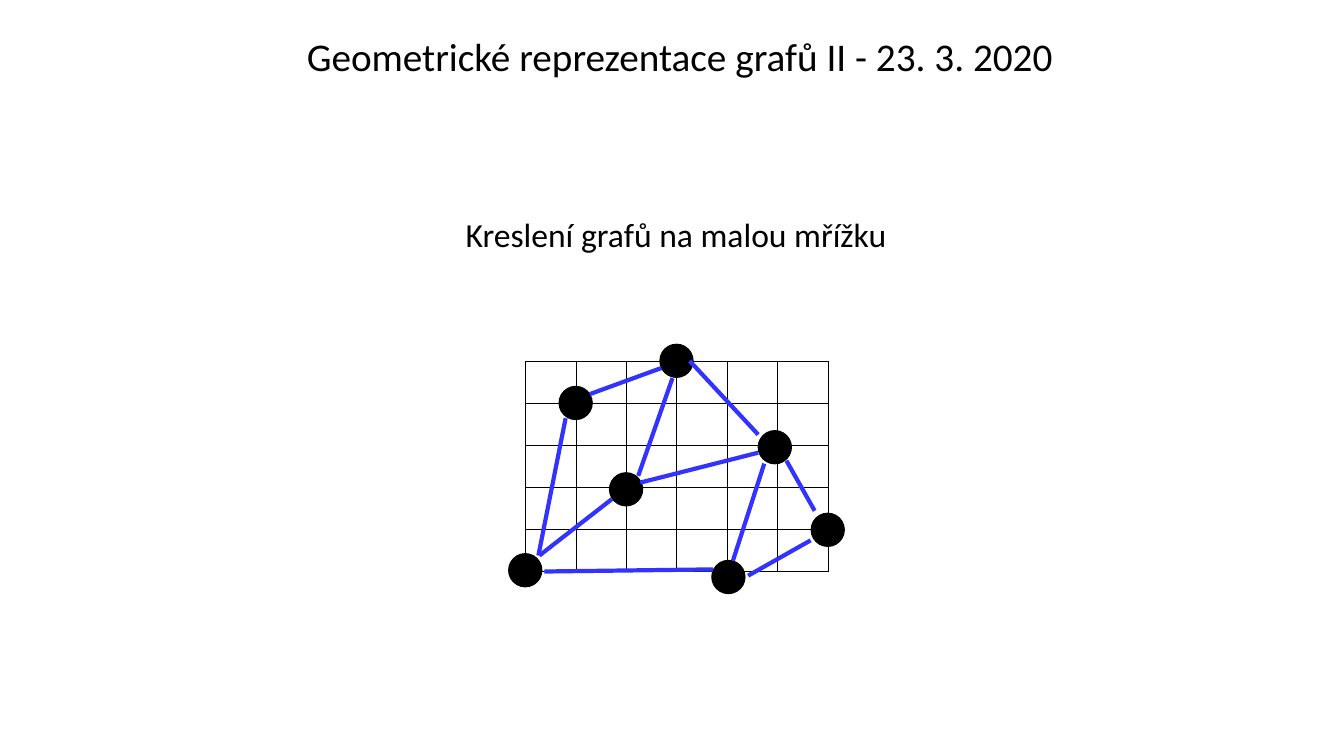
import pptx
import pptx.dml.color
import pptx.enum.shapes
import pptx.enum.text
import pptx.util
from lxml import etree

Inches = pptx.util.Inches
BLACK = pptx.dml.color.RGBColor(0x00, 0x00, 0x00)
BLUE = pptx.dml.color.RGBColor(0x33, 0x33, 0xFF)
DRAWING_NS = "http://schemas.openxmlformats.org/drawingml/2006/main"

# Grid: origin, cell size and number of cells, in inches
LEFT, TOP = 5.21, 3.58
CELL_WIDTH, CELL_HEIGHT = 0.5, 0.418
COLUMNS, ROWS = 6, 5
VERTEX_SIZE = 0.33

deck = pptx.Presentation()
deck.slide_width, deck.slide_height = Inches(13.33), Inches(7.5)
page = deck.slides.add_slide(deck.slide_layouts[6])


def grid_point(column, row):
    return LEFT + column * CELL_WIDTH, TOP + row * CELL_HEIGHT


def draw_line(start, end, color, width):
    ends = [Inches(length) for point in (start, end) for length in grid_point(*point)]
    line = page.shapes.add_connector(pptx.enum.shapes.MSO_CONNECTOR.STRAIGHT, *ends)
    line.line.color.rgb = color
    line.line.width = pptx.util.Pt(width)
    etree.SubElement(line._element.spPr, f"{{{DRAWING_NS}}}effectLst")


# Title and subtitle
ANCHOR = pptx.enum.text.MSO_ANCHOR
headings = [
    ("Geometrické reprezentace grafů II - 23. 3. 2020", (1.74, 0.23, 10, 0.61), 28,
     {"vertical_anchor": ANCHOR.BOTTOM}),
    ("Kreslení grafů na malou mřížku", (0.19, 1.11, 13.03, 6.21), 24,
     {"vertical_anchor": ANCHOR.TOP, "margin_top": Inches(1.06)}),
]
for text, place, size, frame_format in headings:
    box = page.shapes.add_textbox(*map(Inches, place))
    frame = box.text_frame
    for name, value in {"word_wrap": True, **frame_format}.items():
        setattr(frame, name, value)
    para = frame.paragraphs[0]
    para.alignment = pptx.enum.text.PP_ALIGN.CENTER
    para.line_spacing = 0.9
    span = para.add_run()
    span.text = text
    for name, value in {"name": "Calibri", "size": pptx.util.Pt(size)}.items():
        setattr(span.font, name, value)
    span.font.color.rgb = BLACK

# Grid lines, then the shorter strokes that lie over some of them
grid_lines = [((0, row), (COLUMNS, row)) for row in range(ROWS + 1)]
grid_lines += [((column, 0), (column, ROWS)) for column in range(COLUMNS + 1)]
grid_lines += [
    ((1, 3), (5, 3)), ((1, 5), (1, 2)), ((3, 5), (3, 3)),
    ((4, 3), (4, 0)), ((5, 4), (5, 1)), ((0, 2), (2, 2)),
]
for start, end in grid_lines:
    draw_line(start, end, BLACK, 0.25)

# Vertices: centres as column and row of the grid
vertices = [(1, 1), (2, 3.05), (0, 4.97), (4.03, 5.13), (3, 0), (4.95, 2.05), (6, 4.01)]
for vertex in vertices:
    x, y = grid_point(*vertex)
    dot = page.shapes.add_shape(
        pptx.enum.shapes.MSO_SHAPE.OVAL,
        Inches(x - VERTEX_SIZE / 2), Inches(y - VERTEX_SIZE / 2),
        Inches(VERTEX_SIZE), Inches(VERTEX_SIZE))
    dot.shadow.inherit = False
    dot.fill.solid()
    dot.fill.fore_color.rgb = BLACK
    dot.line.color.rgb = BLACK
    dot.line.width = pptx.util.Pt(0.75)

# Edges: ends as column and row of the grid, at the rims of the vertices
edges = [
    ((1.28, 0.79), (2.7, 0.17)),
    ((0.28, 4.62), (1.72, 3.28)),
    ((0.26, 4.62), (0.8, 1.36)),
    ((4.12, 4.74), (4.74, 2.44)),
    ((2.24, 2.73), (2.92, 0.41)),
    ((0.38, 5), (3.72, 4.95)),
    ((2.28, 2.89), (4.62, 2.18)),
    ((3.26, 0), (4.62, 1.75)),
    ((5.18, 2.37), (5.74, 3.56)),
    ((4.42, 5.1), (5.66, 4.26)),
]
for start, end in edges:
    draw_line(start, end, BLUE, 3)

deck.save("out.pptx")
